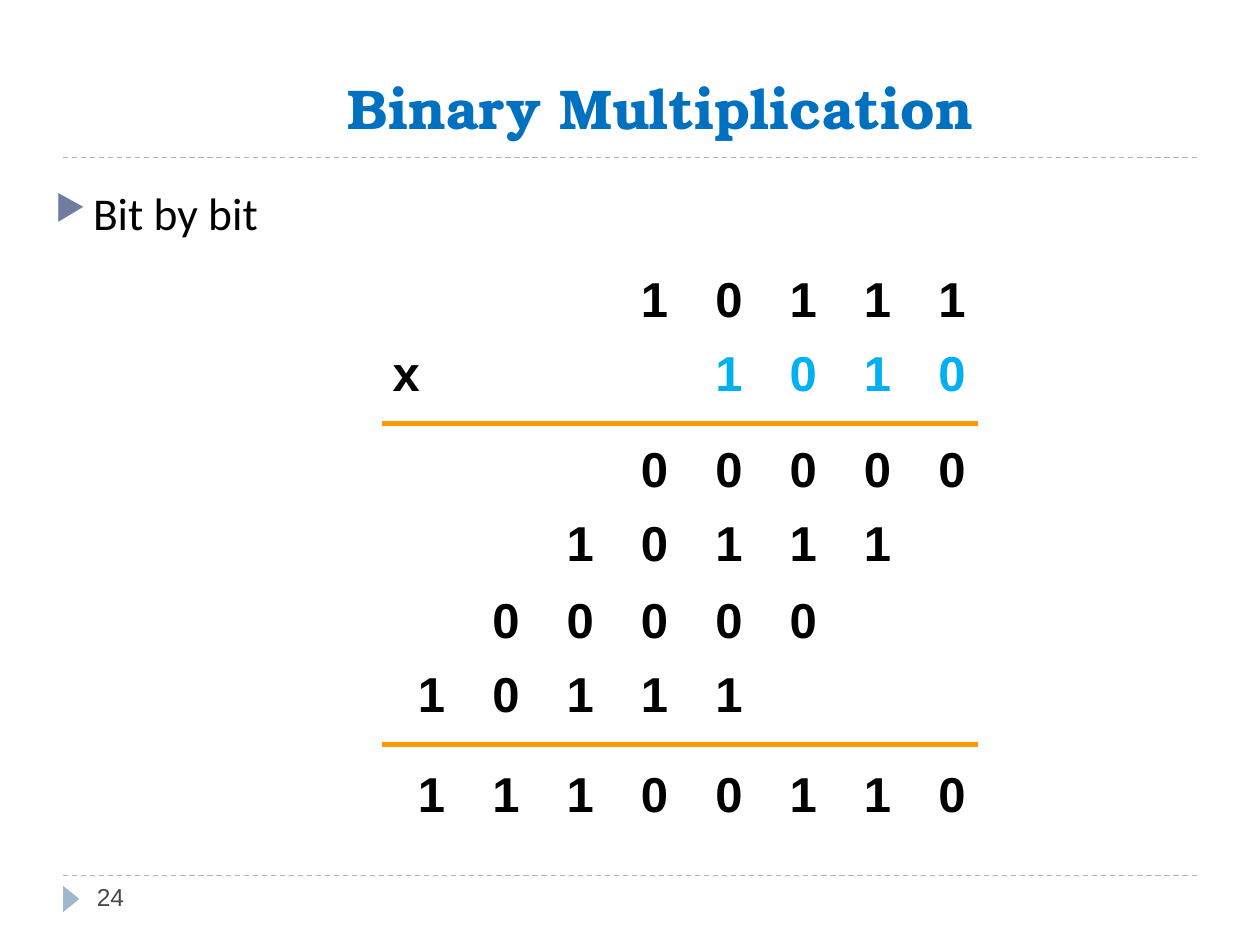
from lxml.etree import SubElement
from pptx import Presentation
from pptx.dml.color import RGBColor
from pptx.enum.dml import MSO_LINE_DASH_STYLE as Dash
from pptx.enum.shapes import MSO_CONNECTOR as Connector, MSO_SHAPE as Shape
from pptx.enum.text import MSO_ANCHOR as Anchor, MSO_AUTO_SIZE as AutoSize, PP_ALIGN as Align
from pptx.oxml.ns import qn
from pptx.util import Inches, Pt

COLORS = {
    "title": "0070C0",
    "text": "000000",
    "multiplier": "00B0F0",
    "sum_line": "FF9900",
    "frame": "9FB8CD",
    "bullet": "727CA3",
    "number": "464653",
}


def color(name):
    return RGBColor.from_string(COLORS[name])


def write(frame, text, size, font="Arial", fill="text", bold=False, align=None):
    frame.word_wrap = True
    para = frame.paragraphs[0]
    para.alignment = align
    span = para.add_run()
    span.text = text
    span.font.size = Pt(size)
    span.font.name = font
    span.font.bold = bold
    span.font.color.rgb = color(fill)
    return para


def add_text(page, box, text, size, **style):
    frame = page.shapes.add_textbox(*map(Inches, box)).text_frame
    return frame, write(frame, text, size, **style)


def add_rule(page, left, right, y, fill, width, dash=None):
    rule = page.shapes.add_connector(
        Connector.STRAIGHT, Inches(left), Inches(y), Inches(right), Inches(y))
    rule.line.color.rgb = color(fill)
    rule.line.width = Pt(width)
    if dash:
        rule.line.dash_style = dash
    SubElement(rule._element.spPr, qn("a:effectLst"))


def add_frame(page, left, top, width, height):
    for y in (top + height, top):
        add_rule(page, left, left + width, y, "frame", 0.75, Dash.DASH)
    marker = page.shapes.add_shape(
        Shape.ISOSCELES_TRIANGLE, Inches(left - 0.04), Inches(top + height + 0.12),
        Inches(0.21), Inches(0.13))
    marker.rotation = 90
    marker.shadow.inherit = False
    marker.fill.solid()
    marker.fill.fore_color.rgb = color("frame")
    marker.line.fill.background()


def add_title(page, box, text):
    title = page.shapes.title
    title.left, title.top, title.width, title.height = map(Inches, box)
    frame = title.text_frame
    frame.vertical_anchor = Anchor.BOTTOM
    frame.auto_size = AutoSize.NONE
    write(frame, text, 32, font="TeX Gyre Bonum", fill="title", bold=True, align=Align.CENTER)


def add_bullet(page, box, text):
    para = add_text(page, box, text, 26, font="Calibri")[1]
    para.space_before = Pt(6)
    props = para._p.get_or_add_pPr()
    props.set("marL", str(Inches(0.3)))
    props.set("indent", str(Inches(-0.3)))
    tint = SubElement(props, qn("a:buClr"))
    SubElement(tint, qn("a:srgbClr"), val=COLORS["bullet"])
    SubElement(props, qn("a:buSzPct"), val="76000")
    SubElement(props, qn("a:buChar"), char="▶")


def add_digit(page, left, top, text, fill="text"):
    frame, para = add_text(page, (left, top, 0.39, 0.42), text, 28,
                           fill=fill, bold=True, align=Align.CENTER)
    frame.margin_left = frame.margin_right = frame.margin_top = frame.margin_bottom = 0
    frame.auto_size = AutoSize.SHAPE_TO_FIT_TEXT
    para.line_spacing = 0.9


def add_multiplication(page, left, top, width):
    step = 0.59
    rows = [
        (0, "10111", 0, "text"),
        (0.59, "1010", 0, "multiplier"),
        (1.35, "00000", 0, "text"),
        (1.94, "10111", 1, "text"),
        (2.55, "00000", 2, "text"),
        (3.14, "10111", 3, "text"),
        (3.93, "11100110", 0, "text"),
    ]
    last_column = left + width - 0.4
    for offset, digits, shift, fill in rows:
        for place, digit in enumerate(reversed(digits), shift):
            add_digit(page, last_column - place * step, top + offset, digit, fill)
    add_digit(page, left, top + step, "x")
    for offset in (1.18, 3.73):
        add_rule(page, left, left + width, top + offset, "sum_line", 3)


def main():
    deck = Presentation()
    deck.slide_width, deck.slide_height = Inches(10), Inches(7.5)
    page = deck.slides.add_slide(deck.slide_layouts[5])
    add_frame(page, 0.5, 1.25, 9, 5.7)
    add_title(page, (2.56, 0.21, 5.37, 0.96), "Binary Multiplication")
    add_bullet(page, (0.34, 1.42, 9.37, 0.87), "Bit by bit")
    add_multiplication(page, 3.03, 2.18, 4.73)
    add_text(page, (0.67, 6.95, 2.17, 0.4), "24", 14, fill="number")
    deck.save("out.pptx")


if __name__ == "__main__":
    main()
